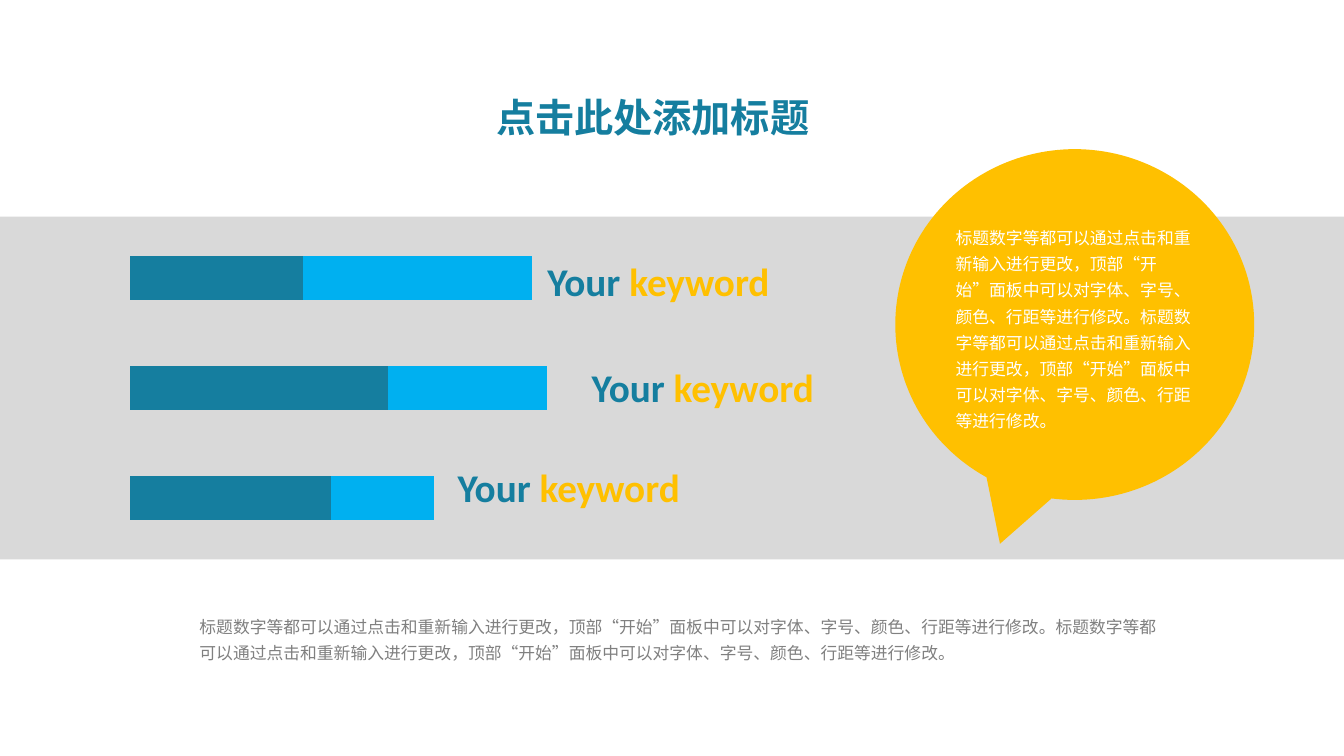
from lxml import etree
from pptx import Presentation
from pptx.chart.data import CategoryChartData
from pptx.dml.color import RGBColor
from pptx.enum import chart as ch, shapes, text
from pptx.oxml.ns import qn
from pptx.util import Inches, Pt

TEAL = RGBColor(0x15, 0x7E, 0x9F)
BLUE = RGBColor(0x00, 0xB0, 0xF0)
AMBER = RGBColor(0xFF, 0xC0, 0x00)
GREY = RGBColor(0x80, 0x80, 0x80)
BAND = RGBColor(0xD9, 0xD9, 0xD9)
WHITE = RGBColor(0xFF, 0xFF, 0xFF)
CJK, LATIN = "Noto Sans CJK SC", "Calibri"

SENTENCE = "标题数字等都可以通过点击和重新输入进行更改，顶部“开始”面板中可以对字体、字号、颜色、行距等进行修改。"
SERIES = [((78, 100, 67), TEAL), ((40, 62, 89), BLUE)]
KEYWORD_CORNERS = [(5.33, 2.5), (5.77, 3.56), (4.44, 4.55)]


def inches(box):
    return [Inches(v) for v in box]


def write(frame, pieces, font, size, bold=False, spacing=1.0):
    """Fill a frame with one left-aligned paragraph of (words, colour) pieces."""
    settings = {"word_wrap": True, "auto_size": text.MSO_AUTO_SIZE.NONE,
                "vertical_anchor": text.MSO_ANCHOR.TOP}
    for key, value in settings.items():
        setattr(frame, key, value)
    line = frame.paragraphs[0]
    line.alignment, line.line_spacing = text.PP_ALIGN.LEFT, spacing
    for words, colour in pieces:
        run = line.add_run()
        run.text = words
        for key, value in {"name": font, "size": Pt(size), "bold": bold}.items():
            setattr(run.font, key, value)
        run.font.color.rgb = colour
        east_asian = etree.SubElement(run.font._element, qn("a:ea"))
        east_asian.set("typeface", font)


def add_text(slide, box, *args, **kwargs):
    write(slide.shapes.add_textbox(*inches(box)).text_frame, *args, **kwargs)


def add_filled(slide, preset, box, colour):
    shape = slide.shapes.add_shape(preset, *inches(box))
    shape.shadow.inherit = False
    shape.fill.solid()
    shape.fill.fore_color.rgb = colour
    shape.line.fill.background()


def add_title(slide, box):
    title = slide.shapes.title
    title.left, title.top, title.width, title.height = inches(box)
    write(title.text_frame, [("点击此处添加标题", TEAL)], CJK, 28, bold=True)


def add_bars(slide, box):
    data = CategoryChartData()
    data.categories = ["1", "2", "3"]
    for number, (values, _) in enumerate(SERIES, 1):
        data.add_series(f"Series {number}", values)
    bars = slide.shapes.add_chart(ch.XL_CHART_TYPE.BAR_STACKED, *inches(box), data).chart
    bars.has_legend = bars.has_title = False
    bars.font.name, bars.font.size = LATIN, Pt(10)
    bars.font.color.rgb = RGBColor(0, 0, 0)
    scale = bars.value_axis
    for key, value in {"minimum_scale": 0, "maximum_scale": 267, "major_unit": 22,
                       "has_major_gridlines": False, "visible": False}.items():
        setattr(scale, key, value)
    bars.category_axis.visible = False

    plot = bars.plots[0]
    plot.gap_width, plot.overlap, plot.vary_by_categories = 150, 100, False
    for series, (_, colour) in zip(plot.series, SERIES):
        series.format.fill.solid()
        series.format.fill.fore_color.rgb = colour

    # Plot area with an even margin inside the chart frame
    area = bars._chartSpace.chart.plotArea
    for old in area.findall(qn("c:layout")):
        area.remove(old)
    layout = etree.Element(qn("c:layout"))
    area.insert(0, layout)
    manual = etree.SubElement(layout, qn("c:manualLayout"))
    for tag, value in [("layoutTarget", "inner"), ("xMode", "edge"), ("yMode", "edge"),
                       ("x", "0.02"), ("y", "0.02"), ("w", "0.96"), ("h", "0.96")]:
        etree.SubElement(manual, qn(f"c:{tag}")).set("val", value)


def add_keywords(slide, corners):
    for left, top in corners:
        add_text(slide, (left, top, 2.66, 0.57),
                 [("Your ", TEAL), ("keyword", AMBER)], LATIN, 28, bold=True)


def add_callout(slide, box):
    left, top, _, _ = box
    add_filled(slide, shapes.MSO_SHAPE.OVAL_CALLOUT, box, AMBER)
    add_text(slide, (left + 0.5, top + 0.67, 2.57, 2.2),
             [(SENTENCE * 2, WHITE)], CJK, 12, spacing=1.3)


def main():
    deck = Presentation()
    deck.slide_width, deck.slide_height = Inches(13.33), Inches(7.5)
    slide = deck.slides.add_slide(deck.slide_layouts[5])

    # Heading
    add_title(slide, (4.82, 0.88, 3.44, 0.57))
    # Grey band with bars and their labels
    add_filled(slide, shapes.MSO_SHAPE.RECTANGLE, (0, 2.15, 13.33, 3.4), BAND)
    add_bars(slide, (1.15, 2.15, 7.1, 3.4))
    add_keywords(slide, KEYWORD_CORNERS)
    # Explanation below the band
    add_text(slide, (1.88, 6.01, 9.72, 0.63),
             [(SENTENCE * 2, GREY)], CJK, 12, spacing=1.3)
    # Speech bubble
    add_callout(slide, (8.88, 1.48, 3.56, 3.48))

    deck.save("out.pptx")


if __name__ == "__main__":
    main()
